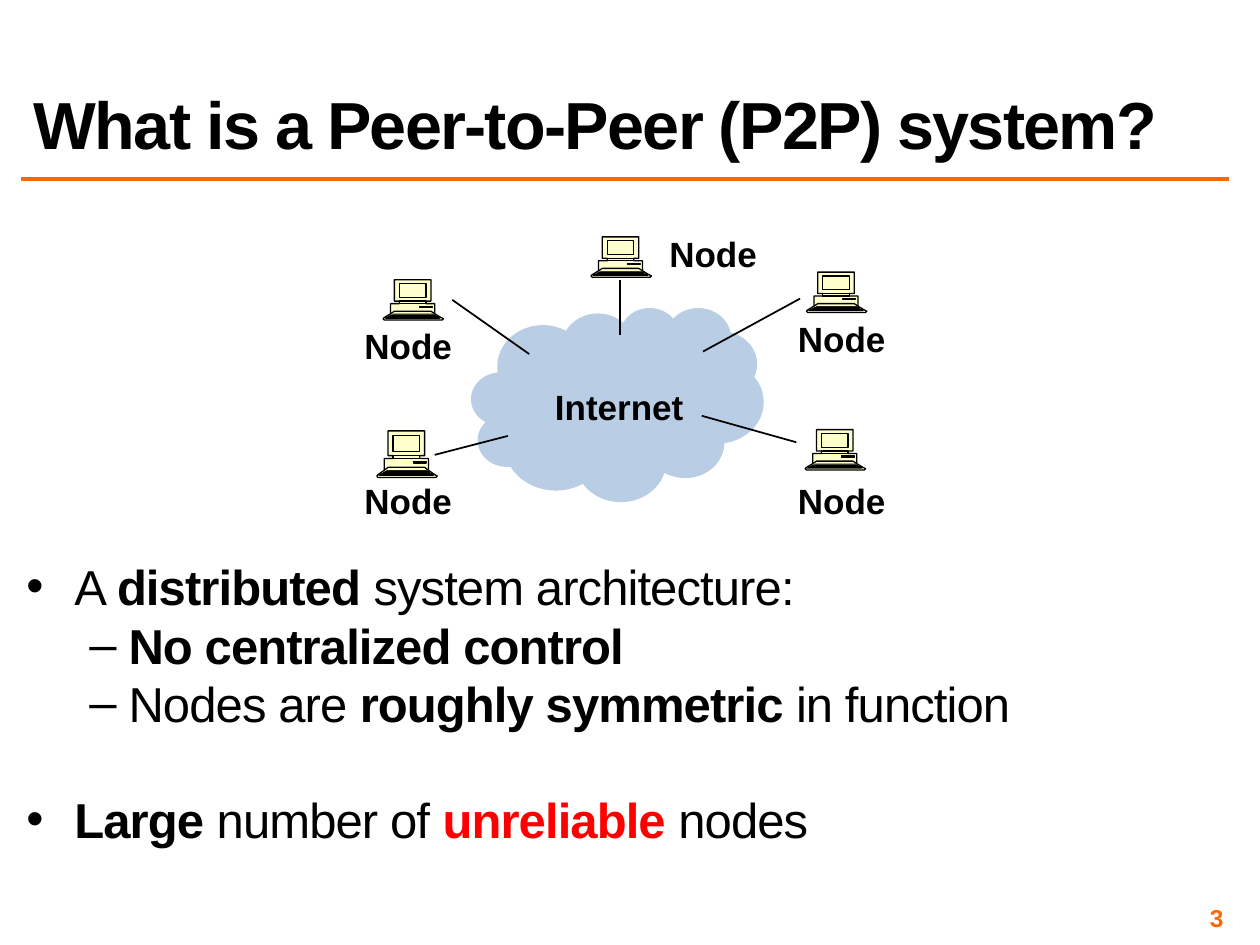
from copy import deepcopy

from lxml import etree
from pptx import Presentation
from pptx.dml.color import RGBColor
from pptx.enum.shapes import MSO_CONNECTOR, MSO_SHAPE
from pptx.enum.text import MSO_ANCHOR as Anchor, PP_ALIGN as Align
from pptx.oxml.ns import qn
from pptx.util import Inches, Pt

COLORS = {"black": "000000", "red": "FF0000", "orange": "FF6600",
          "cloud": "B9CDE5", "screen": "FFFFCC"}
FONT = "Arial"

# Content
TITLE = "What is a Peer-to-Peer (P2P) system?"
PAGE_NUMBER = "3"
# level, space before in points, spans of (text, bold, colour)
BULLETS = [
    (0, 6.5, [("A ", False, "black"), ("distributed", True, "black"),
              (" system architecture:", False, "black")]),
    (1, 6.5, [("No centralized control", True, "black")]),
    (1, 6.5, [("Nodes are ", False, "black"), ("roughly symmetric ", True, "black"),
              ("in function", False, "black")]),
    (0, 39, [("Large", True, "black"), (" number of ", False, "black"),
             ("unreliable ", True, "red"), ("nodes", False, "black")]),
]
# bullet sign, left margin, hanging indent for each level
LEVELS = [("•", 0.38, -0.38), ("–", 0.81, -0.31)]

# Network: computer (left, top, height), label (left, top), link (from, to)
NODES = [
    ((6.39, 3.41, 0.32), (6.23, 3.76), ((6.32, 3.51), (5.57, 3.30))),
    ((3.04, 2.22, 0.32), (2.79, 2.53), ((4.20, 2.81), (3.59, 2.38))),
    ((2.99, 3.42, 0.37), (2.79, 3.76), ((3.45, 3.61), (4.03, 3.46))),
    ((4.69, 1.88, 0.32), (5.21, 1.80), ((4.92, 2.66), (4.92, 2.22))),
    ((6.40, 2.16, 0.32), (6.23, 2.47), ((5.58, 2.79), (6.35, 2.37))),
]


def rectangle(left, top, right, bottom):
    return [(left, top), (right, top), (right, bottom), (left, bottom)]


# Computer contours on a 48 by 32 grid: points, closed
GRID_WIDTH, GRID_HEIGHT, GRID_STEPS = 48, 32, 10
COMPUTER = [
    ([(46, 30), (41, 27), (41, 19), (34, 19), (34, 17), (38, 17), (38, 0),
      (9, 0), (9, 17), (13, 17), (13, 19), (6, 19), (6, 27), (1, 30),
      (0, 31), (1, 32), (47, 32), (48, 31)], True),
    ([(40, 27), (38, 26), (9, 26), (8, 27)], True),
    ([(42, 29), (41, 28), (7, 28), (5, 29)], True),
    ([(45, 30.5), (44, 29.5), (4, 29.5), (2, 30.5)], True),
    ([(41, 27), (38, 25), (9, 25), (6, 27)], False),
    (rectangle(29, 21, 39, 22), True),
    (rectangle(13, 3, 34, 14), True),
    (rectangle(13, 17, 34, 19), True),
]


def color(name):
    return RGBColor.from_string(COLORS[name])


def add_line(page, start, end, line_color="black", width=1):
    line = page.shapes.add_connector(
        MSO_CONNECTOR.STRAIGHT, *map(Inches, (*start, *end)))
    line.line.color.rgb = color(line_color)
    line.line.width = Pt(width)
    etree.SubElement(line._element.spPr, qn("a:effectLst"))


def add_box(page, place, inset=None, **frame_format):
    frame = page.shapes.add_textbox(*map(Inches, place)).text_frame
    frame_format = {"word_wrap": True, **frame_format}
    if inset is not None:
        for side in ("left", "top", "right", "bottom"):
            frame_format[f"margin_{side}"] = Inches(inset)
    for name, value in frame_format.items():
        setattr(frame, name, value)
    return frame


def add_span(para, text, size, bold=True, text_color="black", spacing=0):
    span = para.add_run()
    span.text = text
    for name, value in {"name": FONT, "size": Pt(size), "bold": bold}.items():
        setattr(span.font, name, value)
    span.font.color.rgb = color(text_color)
    if spacing:
        span.font._element.set("spc", str(int(spacing * 100)))


def add_label(page, text, left, top, width):
    para = add_box(page, (left, top, width, 0.44), word_wrap=False).paragraphs[0]
    para.alignment = Align.CENTER
    add_span(para, text, 20)


def add_computer(page, left, top, height):
    contours = [([(x * GRID_STEPS, y * GRID_STEPS) for x, y in points], closed)
                for points, closed in COMPUTER]
    scale = (Inches(0.48) / (GRID_WIDTH * GRID_STEPS),
             Inches(height) / (GRID_HEIGHT * GRID_STEPS))
    builder = page.shapes.build_freeform(*contours[0][0][0], scale=scale)
    for index, (points, closed) in enumerate(contours):
        if index:
            builder.move_to(*points[0])
        builder.add_line_segments(points[1:], close=closed)
    shape = builder.convert_to_shape(Inches(left), Inches(top))
    shape.shadow.inherit = False
    shape.fill.solid()
    shape.fill.fore_color.rgb = color("screen")
    shape.line.color.rgb = color("black")
    shape.line.width = Pt(0.75)

    # One outline per contour, so that inner parts are filled too
    outline = next(shape._element.iter(qn("a:path")))
    empty = deepcopy(outline)
    for step in list(empty):
        empty.remove(step)
    outlines = outline.getparent()
    for step in list(outline):
        if step.tag == qn("a:moveTo"):
            current = deepcopy(empty)
            outlines.append(current)
        current.append(step)
    outlines.remove(outline)


def add_bullets(page):
    frame = add_box(page, (0.17, 4.47, 9.58, 2.62), inset=0.04)
    for index, (level, space, spans) in enumerate(BULLETS):
        para = frame.add_paragraph() if index else frame.paragraphs[0]
        para.level = level
        para.line_spacing = 0.8
        para.space_before = Pt(space)
        sign, margin, indent = LEVELS[level]
        props = para._p.get_or_add_pPr()
        props.set("marL", str(Inches(margin)))
        props.set("indent", str(Inches(indent)))
        etree.SubElement(props, qn("a:buFont"), typeface=FONT)
        etree.SubElement(props, qn("a:buChar"), char=sign)
        for text, bold, text_color in spans:
            add_span(para, text, 28, bold, text_color, spacing=-0.5)


def main():
    deck = Presentation()
    deck.slide_width, deck.slide_height = Inches(10), Inches(7.5)
    page = deck.slides.add_slide(deck.slide_layouts[6])

    # Title and rule
    add_line(page, (0.17, 1.42), (9.75, 1.42), "orange", 2)
    para = add_box(page, (0.17, 0.17, 9.58, 1.17),
                   vertical_anchor=Anchor.BOTTOM).paragraphs[0]
    para.line_spacing = 0.8
    add_span(para, TITLE, 38, spacing=-1)

    # Network
    cloud = page.shapes.add_shape(
        MSO_SHAPE.CLOUD, *map(Inches, (3.74, 2.44, 2.32, 1.54)))
    cloud.shadow.inherit = False
    cloud.fill.solid()
    cloud.fill.fore_color.rgb = color("cloud")
    cloud.line.fill.background()
    for computer, label, link in NODES:
        add_computer(page, *computer)
        add_line(page, *link)
        add_label(page, "Node", *label, 0.9)
    add_label(page, "Internet", 4.3, 3.01, 1.23)

    # Bullets and page number
    add_bullets(page)
    para = add_box(page, (7.42, 7.17, 2.33, 0.23), inset=0.04,
                   vertical_anchor=Anchor.MIDDLE).paragraphs[0]
    para.alignment = Align.RIGHT
    add_span(para, PAGE_NUMBER, 14, text_color="orange")

    deck.save("out.pptx")


if __name__ == "__main__":
    main()
